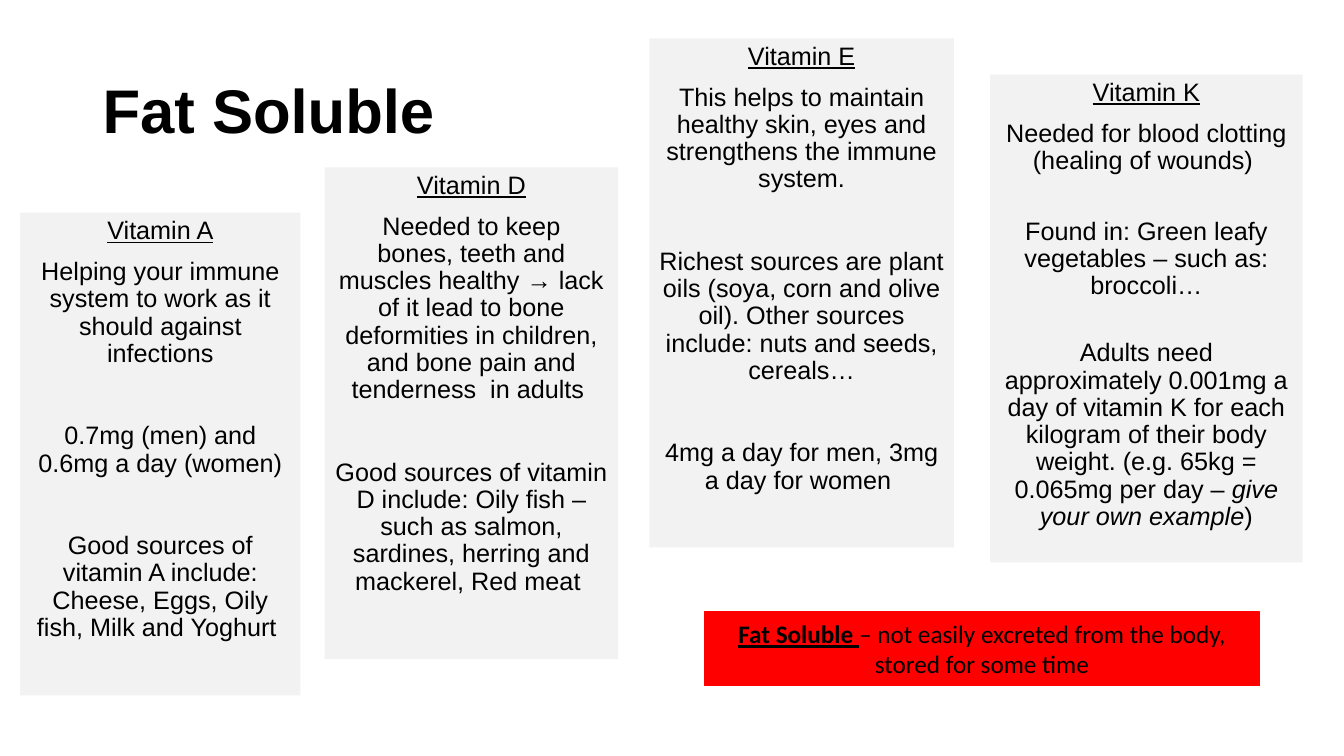
from dataclasses import dataclass

from pptx import Presentation
from pptx.dml.color import RGBColor
from pptx.enum.shapes import MSO_SHAPE
from pptx.enum.text import MSO_ANCHOR, PP_ALIGN
from pptx.util import Emu, Pt

RECTANGLE = MSO_SHAPE.RECTANGLE
TOP, MIDDLE = MSO_ANCHOR.TOP, MSO_ANCHOR.MIDDLE
LEFT, CENTER = PP_ALIGN.LEFT, PP_ALIGN.CENTER

PX = 9144  # EMU in one px, 100 px to the inch
COLORS = {"text": "000000", "panel": "F2F2F2", "definition": "FF0000"}
NBSP = chr(160)
NEAR, WIDE = 10, 39.5  # points above a paragraph

HEADING = {"name": "Arial", "size": Pt(44), "bold": True}
BODY = {"name": "Arial", "size": Pt(18)}
VITAMIN_NAME = {**BODY, "underline": True}
EXAMPLE = {**BODY, "italic": True}
MEANING = {"name": "Calibri", "size": Pt(18)}
TERM = {**MEANING, "bold": True, "underline": True}


@dataclass
class Box:
    left: int
    top: int
    width: int
    height: int

    def emu(self) -> list[Emu]:
        return [Emu(px * PX) for px in (self.left, self.top, self.width, self.height)]


@dataclass
class Run:
    text: str
    font: dict


@dataclass
class Para:
    runs: list[Run]
    above: float = 0
    align: PP_ALIGN = CENTER
    spacing: float = 0.9


@dataclass
class Vitamin:
    name: str
    box: Box
    facts: list[Para]


def fact(text: str, above: float, *more: Run) -> Para:
    return Para([Run(text, BODY), *more], above)


VITAMINS = [
    Vitamin("Vitamin A", Box(20, 211, 278, 479), [
        fact("Helping your immune system to work as it should against infections", NEAR),
        fact("0.7mg (men) and 0.6mg a day (women)", WIDE),
        fact("Good sources of vitamin A include: Cheese, Eggs, Oily fish, "
             "Milk and Yoghurt ", WIDE),
    ]),
    Vitamin("Vitamin D", Box(322, 166, 291, 488), [
        fact(f"Needed to keep bones,{NBSP}teeth and muscles{NBSP}healthy → lack of "
             f"it{NBSP}lead to bone deformities in children, and bone pain and "
             "tenderness  in adults ", NEAR),
        fact(f"Good sources of vitamin D include: Oily fish{NBSP}– such as salmon, "
             f"sardines, herring{NBSP}and mackerel, Red meat ", WIDE),
    ]),
    Vitamin("Vitamin E", Box(644, 38, 302, 505), [
        fact(f"This helps to{NBSP}maintain healthy skin, eyes and strengthens "
             "the immune system.", NEAR),
        fact("Richest sources are plant oils (soya, corn and olive oil). "
             "Other sources include: nuts and seeds, cereals…", WIDE),
        fact("4mg a day for men, 3mg a day for women ", WIDE),
    ]),
    Vitamin("Vitamin K", Box(982, 74, 310, 484), [
        fact("Needed for blood clotting (healing of wounds) ", NEAR),
        fact(f"Found in: Green leafy vegetables{NBSP}– such as: broccoli…", 31),
        fact(f"Adults need approximately 0.001mg{NBSP}a day of vitamin K for each "
             "kilogram of their body weight. (e.g. 65kg = 0.065mg per day – ", 28.5,
             Run("give your own example", EXAMPLE), Run(")", BODY)),
    ]),
]


def write(frame, paras: list[Para], anchor: MSO_ANCHOR) -> None:
    frame.word_wrap = True
    frame.vertical_anchor = anchor
    for index, para in enumerate(paras):
        line = frame.add_paragraph() if index else frame.paragraphs[0]
        layout = {"alignment": para.align, "line_spacing": para.spacing,
                  "space_before": Pt(para.above)}
        for key, value in layout.items():
            setattr(line, key, value)
        for part in para.runs:
            run = line.add_run()
            run.text = part.text
            run.font.color.rgb = RGBColor.from_string(COLORS["text"])
            for key, value in part.font.items():
                setattr(run.font, key, value)


def add_panel(slide, box: Box, color: str, paras: list[Para], anchor: MSO_ANCHOR):
    panel = slide.shapes.add_shape(RECTANGLE, *box.emu())
    panel.shadow.inherit = False
    panel.fill.solid()
    panel.fill.fore_color.rgb = RGBColor.from_string(COLORS[color])
    panel.line.fill.background()
    write(panel.text_frame, paras, anchor)
    return panel


def main() -> None:
    deck = Presentation()
    deck.slide_width, deck.slide_height = Emu(1333 * PX), Emu(750 * PX)
    slide = deck.slides.add_slide(deck.slide_layouts[6])

    title = slide.shapes.add_textbox(*Box(92, 40, 586, 145).emu())
    write(title.text_frame, [Para([Run("Fat Soluble", HEADING)], align=LEFT)], MIDDLE)

    for vitamin in VITAMINS:
        name = Para([Run(vitamin.name, VITAMIN_NAME)])
        add_panel(slide, vitamin.box, "panel", [name, *vitamin.facts], TOP)

    meaning = Run("– not easily excreted from the body, stored for some time", MEANING)
    definition = Para([Run("Fat Soluble ", TERM), meaning], spacing=1.0)
    banner = add_panel(slide, Box(699, 607, 550, 73), "definition", [definition], MIDDLE)
    banner.line.color.rgb = RGBColor.from_string(COLORS["definition"])
    banner.line.width = Pt(1)

    deck.save("out.pptx")


if __name__ == "__main__":
    main()
